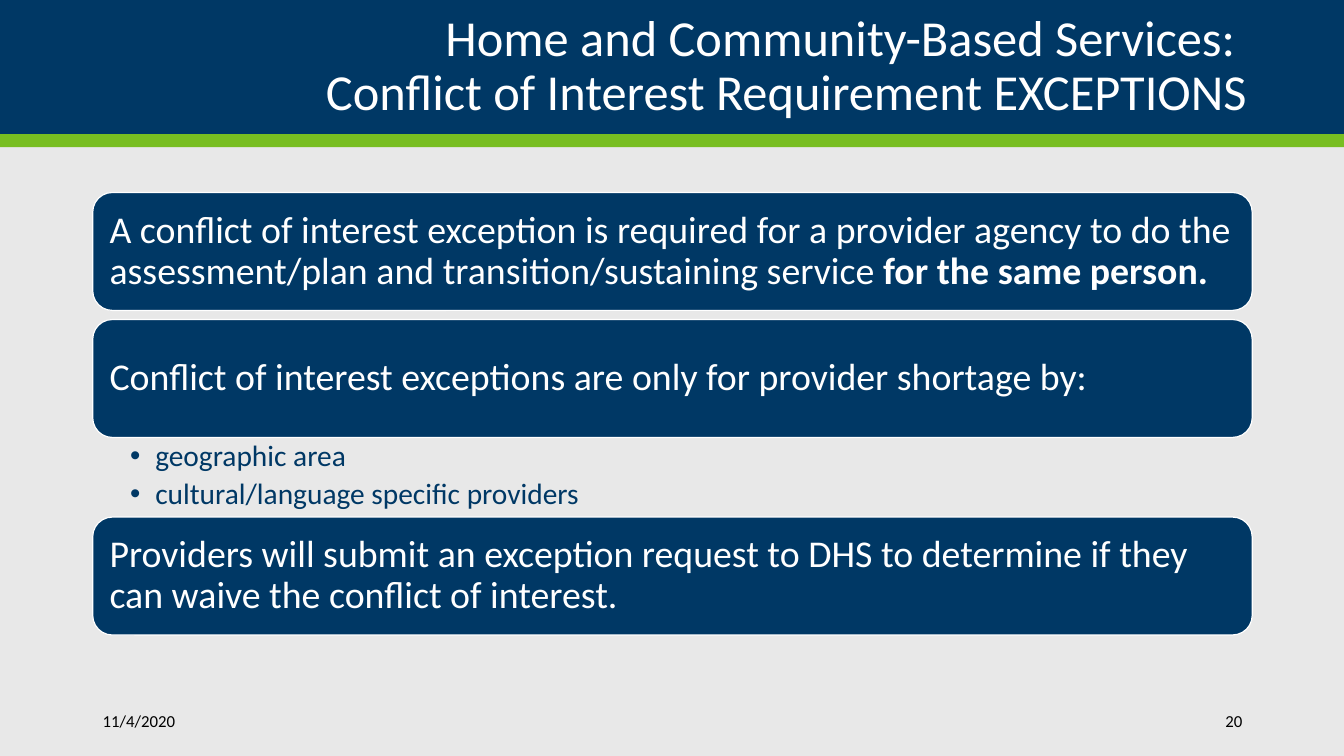
from lxml import etree
from pptx import Presentation
from pptx import util as u
from pptx.dml.color import RGBColor
from pptx.enum import shapes, text
from pptx.oxml import ns

PX = 9144
NAVY, GREEN, WHITE, BLACK, GREY = "003865", "78BE21", "FFFFFF", "000000", "E8E8E8"
LEFT, WIDE, FULL = 92, 1150, 1333
CARD, GAP, LIST = 117, 9, 79
MID, RIGHT = text.MSO_ANCHOR.MIDDLE, text.PP_ALIGN.RIGHT


def px(n):
    """Turn whole px into EMU."""
    return u.Emu(n * PX)


def paint(fill, hue):
    """Make a fill solid in a hex colour."""
    fill.solid()
    fill.fore_color.rgb = RGBColor.from_string(hue)


def place(shape, *box):
    """Put a shape at left, top, width, height."""
    for name, n in zip(("left", "top", "width", "height"), box):
        setattr(shape, name, px(n))


def write(shape, paras, size, hue, pad, anchor=MID, **form):
    """Fill a shape with paragraphs, each a list of (words, bold) runs."""
    frame = shape.text_frame
    left, top, right, low = (px(n) for n in pad)
    look = dict(word_wrap=True, auto_size=text.MSO_AUTO_SIZE.NONE, vertical_anchor=anchor,
                margin_left=left, margin_top=top, margin_right=right, margin_bottom=low)
    for name, val in look.items():
        setattr(frame, name, val)
    style = {"alignment": text.PP_ALIGN.LEFT, "space_before": u.Pt(0), **form}
    for i, runs in enumerate(paras):
        para = frame.add_paragraph() if i else frame.paragraphs[0]
        for name, val in style.items():
            setattr(para, name, val)
        for line, bold in runs:
            for k, part in enumerate(line.split("\n")):
                if k:
                    para.add_line_break()
                run = para.add_run()
                run.text = part
                for name, val in dict(name="Calibri", size=u.Pt(size), bold=bold).items():
                    setattr(run.font, name, val)
                paint(run.font.fill, hue)


def block(slide, kind, box, hue, edge=None):
    """Add a filled preset shape with an optional outline."""
    shape = slide.shapes.add_shape(kind, *map(px, box))
    shape.shadow.inherit = False
    paint(shape.fill, hue)
    if edge:
        paint(shape.line.fill, edge)
        shape.line.width = u.Pt(0.85)
    else:
        shape.line.fill.background()
    return shape


def card(slide, top, runs):
    """Add a rounded card with one statement."""
    shape = block(slide, shapes.MSO_SHAPE.ROUNDED_RECTANGLE, (LEFT, top, WIDE, CARD), NAVY, WHITE)
    write(shape, [runs], 27, WHITE, (11, 11, 11, 11), line_spacing=0.9)


def bullets(shape, top, items):
    """Set the body placeholder as a bullet list."""
    place(shape, LEFT, top, WIDE, LIST)
    write(shape, [[(item, False)] for item in items], 21, NAVY, (37, 4, 21, 4),
          text.MSO_ANCHOR.TOP, line_spacing=0.9, space_after=u.Pt(4))
    for para in shape.text_frame.paragraphs:
        prop = para._p.get_or_add_pPr()
        prop.set("marL", str(px(25)))
        prop.set("indent", str(px(-25)))
        etree.SubElement(prop, ns.qn("a:buFont")).set("typeface", "Arial")
        etree.SubElement(prop, ns.qn("a:buChar")).set("char", "•")


def note(slide, left, width, words, **form):
    """Add a small footer text."""
    shape = slide.shapes.add_textbox(*map(px, (left, 695, width, 40)))
    write(shape, [[(words, False)]], 12, BLACK, (10, 5, 10, 5), **form)


def main():
    """Build the slide and save it."""
    deck = Presentation()
    deck.slide_width, deck.slide_height = px(FULL), px(750)
    slide = deck.slides.add_slide(deck.slide_layouts[1])
    paint(slide.background.fill, GREY)
    title, body = slide.placeholders
    for top, high, hue in ((0, 133, NAVY), (133, 13, GREEN)):
        block(slide, shapes.MSO_SHAPE.RECTANGLE, (0, top, FULL, high), hue)
    for shape in (title, body):
        slide.shapes._spTree.append(shape._element)
    place(title, LEFT, 0, WIDE, 133)
    heading = "Home and Community-Based Services: \nConflict of Interest Requirement EXCEPTIONS"
    write(title, [[(heading, False)]], 36, WHITE, (5, 5, 5, 5), alignment=RIGHT, line_spacing=0.9)

    first = 191
    second = first + CARD + GAP
    points = second + CARD
    card(slide, first, [
        ("A conflict of interest exception is required for a provider agency to do the "
         "assessment/plan and transition/sustaining service ", False),
        ("for the same person.", True)])
    card(slide, second, [
        ("Conflict of interest exceptions are only for provider shortage by:", False)])
    bullets(body, points, ["geographic area", "cultural/language specific providers"])
    card(slide, points + LIST, [
        ("Providers will submit an exception request to DHS to determine if they "
         "can waive the conflict of interest.", False)])
    note(slide, LEFT, 149, "11/4/2020")
    note(slide, 1082, 160, "20", alignment=RIGHT)
    deck.save("out.pptx")


if __name__ == "__main__":
    main()
